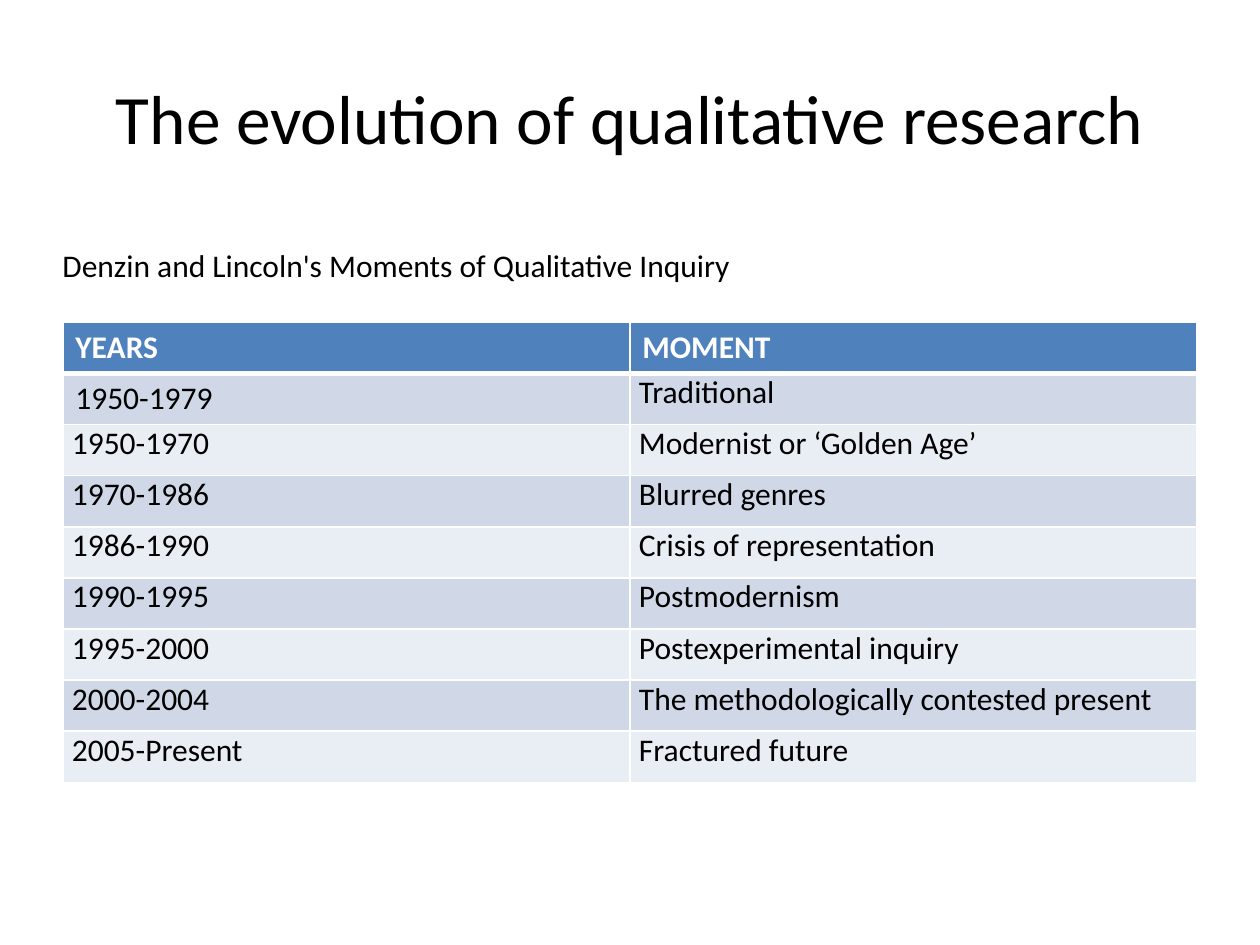
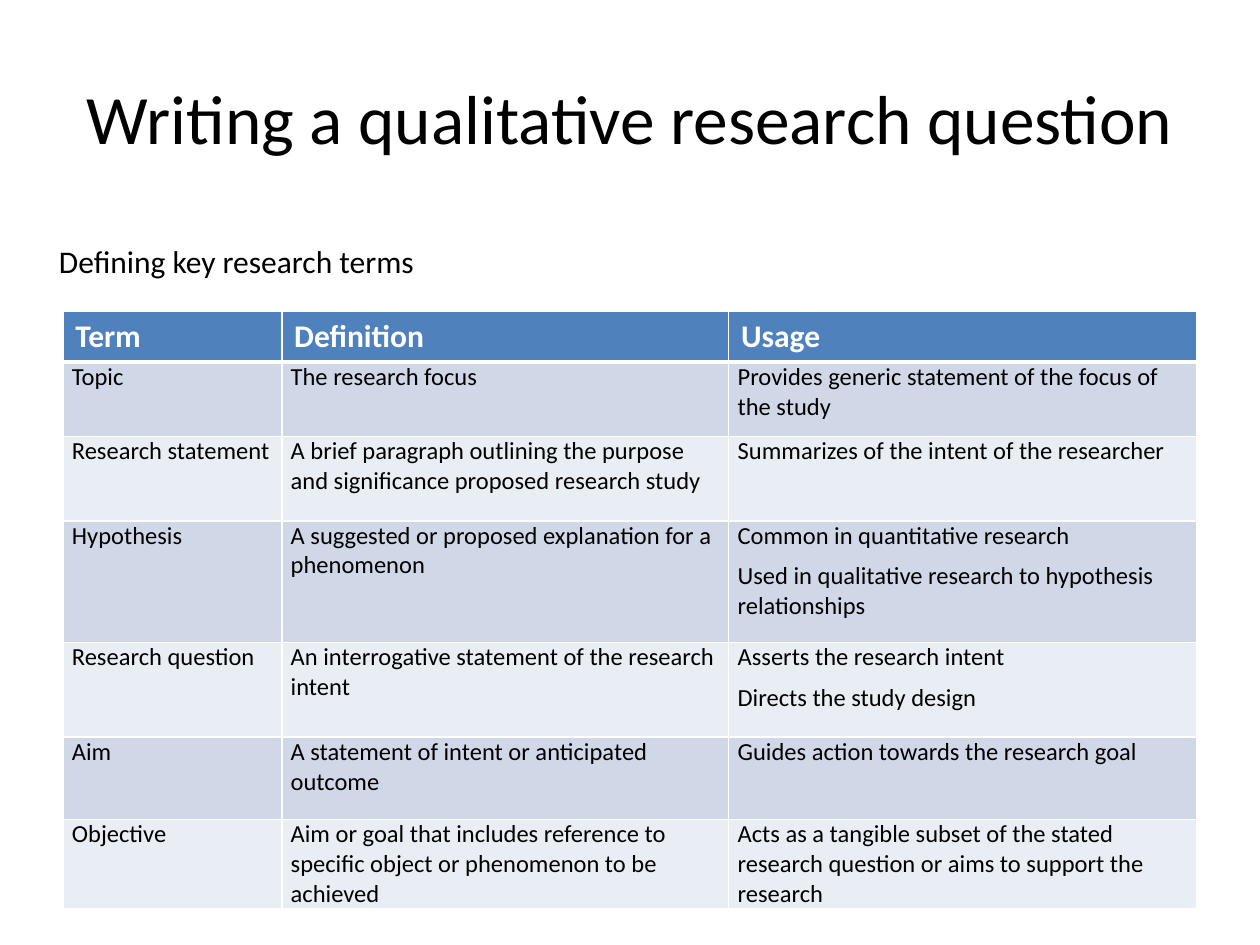
from lxml.etree import SubElement
from pptx import Presentation
from pptx.dml.color import RGBColor
from pptx.enum.text import MSO_ANCHOR, PP_ALIGN
from pptx.oxml import parse_xml
from pptx.oxml.ns import nsdecls, qn
from pptx.util import Cm, Pt

FONT = "Calibri"
COLORS = {
    "text": "000000",
    "light": "FFFFFF",
    "head": "4F81BD",
    "odd": "D0D8E8",
    "even": "E9EDF4",
}
TITLE = (1.27, 0.76, 22.86, 3.18)
LOOSE = (0.25, 0.13)
TIGHT = (0.18, 0)
THIN, THICK = 1, 3

MOMENTS = [
    ("YEARS", "MOMENT"),
    ("1950-1979", "Traditional"),
    ("1950-1970", "Modernist or ‘Golden Age’"),
    ("1970-1986", "Blurred genres"),
    ("1986-1990", "Crisis of representation"),
    ("1990-1995", "Postmodernism"),
    ("1995-2000", "Postexperimental inquiry"),
    ("2000-2004", "The methodologically contested present"),
    ("2005-Present", "Fractured future"),
]
TERMS = [
    ("Term", "Definition", "Usage"),
    ("Topic", "The research focus",
     "Provides generic statement of the focus of the study"),
    ("Research statement",
     "A brief paragraph outlining the purpose and significance proposed research study",
     "Summarizes of the intent of the researcher"),
    ("Hypothesis", "A suggested or proposed explanation for a phenomenon",
     "Common in quantitative research\n"
     "Used in qualitative research to hypothesis relationships"),
    ("Research question", "An interrogative statement of the research intent",
     "Asserts the research intent\nDirects the study design"),
    ("Aim", "A statement of intent or anticipated outcome",
     "Guides action towards the research goal"),
    ("Objective",
     "Aim or goal that includes reference to specific object or phenomenon to be achieved",
     "Acts as a tangible subset of the stated research question or aims to support the research"),
]


def write(frame, text, size=18, color="text", bold=False,
          align=PP_ALIGN.LEFT, before=0, after=0):
    for i, line in enumerate(text.split("\n")):
        para = frame.add_paragraph() if i else frame.paragraphs[0]
        para.alignment = align
        para.space_before, para.space_after = Pt(before), Pt(after)
        run = para.add_run()
        run.text = line
        run.font.name, run.font.size, run.font.bold = FONT, Pt(size), bold
        run.font.color.rgb = RGBColor.from_string(COLORS[color])


def add_text(slide, box, text, anchor=MSO_ANCHOR.TOP, **style):
    frame = slide.shapes.add_textbox(*map(Cm, box)).text_frame
    frame.word_wrap = True
    frame.vertical_anchor = anchor
    write(frame, text, **style)


def fill_cell(cell, text, shade, pad, **style):
    cell.fill.solid()
    cell.fill.fore_color.rgb = RGBColor.from_string(COLORS[shade])
    side, end = map(Cm, pad)
    cell.margin_left = cell.margin_right = side
    cell.margin_top = cell.margin_bottom = end
    write(cell.text_frame, text, **style)


def add_edges(cell, top, bottom):
    props = cell._tc.get_or_add_tcPr()
    edges = [("lnL", THIN), ("lnR", THIN), ("lnT", top), ("lnB", bottom)]
    for i, (tag, width) in enumerate(edges):
        line = parse_xml(f'<a:{tag} {nsdecls("a")} w="{Pt(width)}"/>')
        fill = SubElement(line, qn("a:solidFill"))
        SubElement(fill, qn("a:srgbClr"), val=COLORS["light"])
        props.insert(i, line)


def add_grid(slide, left, top, data, widths, heights, head, body, plain=()):
    box = map(Cm, (left, top, sum(widths), sum(heights)))
    grid = slide.shapes.add_table(len(data), len(widths), *box).table
    for col, width in zip(grid.columns, widths):
        col.width = Cm(width)
    for row, height in zip(grid.rows, heights):
        row.height = Cm(height)
    for r, texts in enumerate(data):
        shade = "odd" if r % 2 else "even"
        for c, text in enumerate(texts):
            cell = grid.cell(r, c)
            if r == 0:
                fill_cell(cell, text, "head", LOOSE, color="light",
                          bold=True, **head)
            elif (r, c) in plain:
                fill_cell(cell, text, shade, LOOSE)
            else:
                fill_cell(cell, text, shade, TIGHT, **body)
            add_edges(cell, top=THICK if r == 1 else THIN,
                      bottom=THICK if r == 0 else THIN)


def add_page(deck, title, note, box, **grid):
    slide = deck.slides.add_slide(deck.slide_layouts[6])
    add_text(slide, TITLE, title, anchor=MSO_ANCHOR.MIDDLE, size=39.6,
             align=PP_ALIGN.CENTER)
    add_text(slide, box, note)
    add_grid(slide, TITLE[0], **grid)


def main():
    deck = Presentation()
    deck.slide_width, deck.slide_height = Cm(25.4), Cm(19.05)
    add_page(deck, "The evolution of qualitative research",
             "Denzin and Lincoln's Moments of Qualitative Inquiry",
             (1.01, 4.83, 14.5, 1.03), top=6.5, data=MOMENTS,
             widths=[TITLE[2] / 2] * 2, heights=[1.03] * len(MOMENTS),
             head={}, body={"before": 6, "after": 6}, plain=[(1, 0)])
    add_page(deck, "Writing a qualitative research question",
             "Defining key research terms",
             (0.94, 4.75, 7.98, 1.03), top=6.27, data=TERMS,
             widths=[4.41, 9.01, 9.44],
             heights=[1.03, 1.5, 1.7, 2.45, 1.91, 1.66, 1.79],
             head={"after": 6}, body={"size": 14, "after": 6})
    deck.save("out.pptx")


if __name__ == "__main__":
    main()
